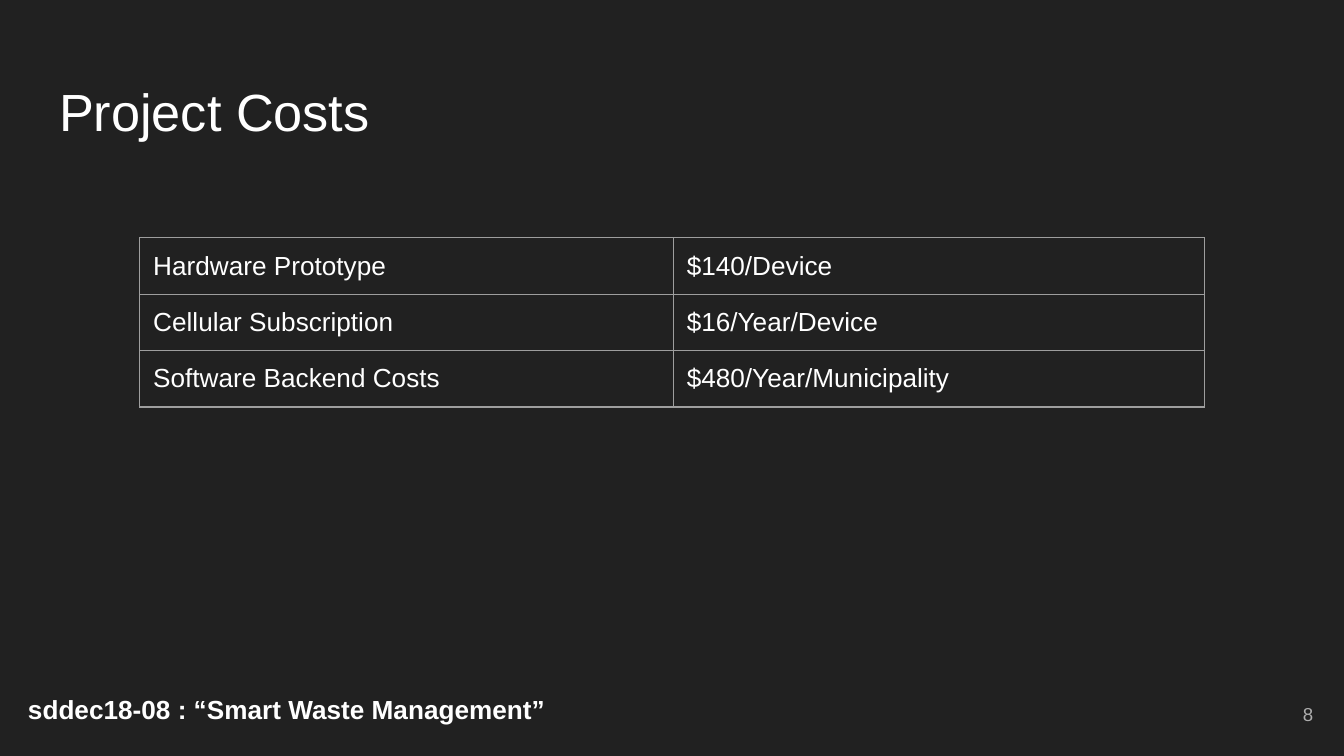
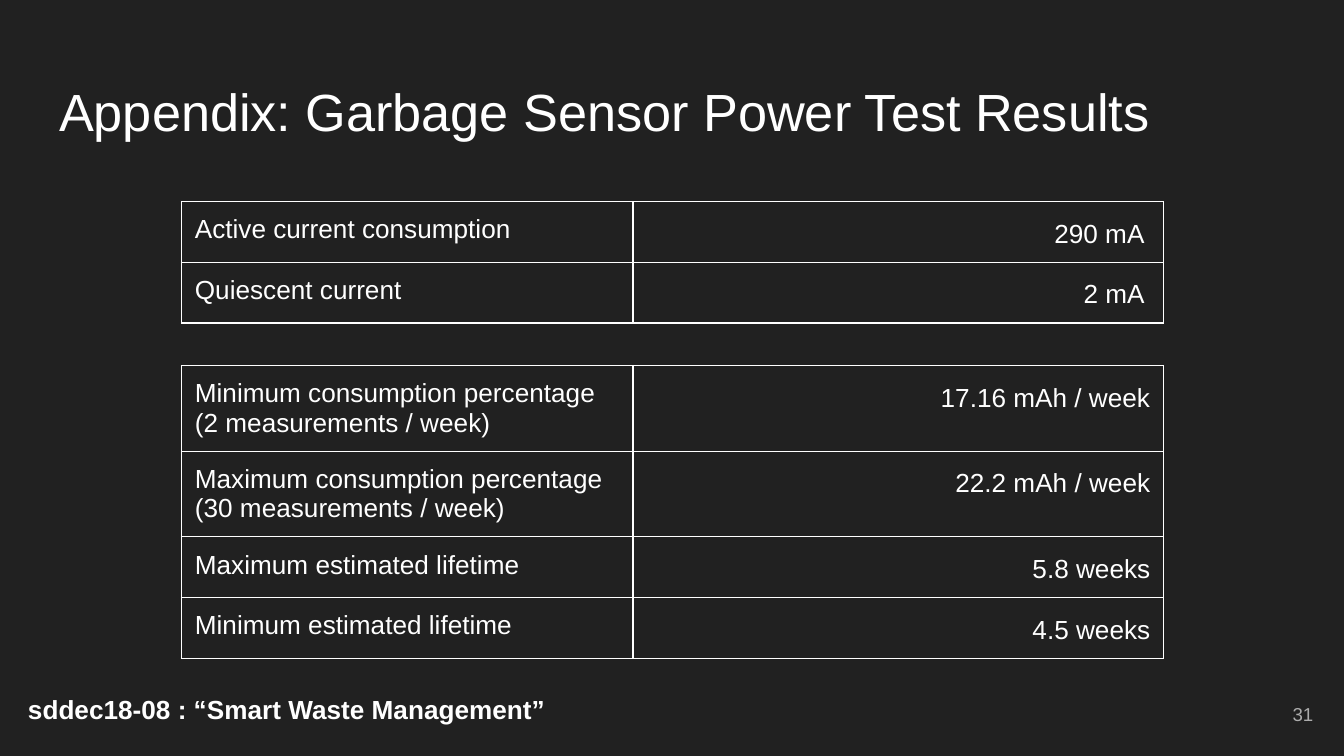
from lxml import etree
from pptx import Presentation
from pptx import util as u
from pptx.dml.color import RGBColor
from pptx.enum import text
from pptx.oxml import ns

DARK = RGBColor(0x21, 0x21, 0x21)
WHITE = RGBColor(0xFF, 0xFF, 0xFF)
GREY = RGBColor(0x9E, 0x9E, 0x9E)
PALE = RGBColor(0xAD, 0xAD, 0xAD)
LEFT, RIGHT = text.PP_ALIGN.LEFT, text.PP_ALIGN.RIGHT
TOP, MID = text.MSO_ANCHOR.TOP, text.MSO_ANCHOR.MIDDLE
PAD = u.Inches(0.1)
SIDES = ("left", "top", "right", "bottom")
FOOTER = "sddec18-08 : “Smart Waste Management”"

PAGES = [
    ("Project Costs", "8", [
        (1.04, 1.77, (3.97, 3.95), 0.42, GREY, LEFT, None, [
            ("Hardware Prototype", "$140/Device"),
            ("Cellular Subscription", "$16/Year/Device"),
            ("Software Backend Costs", "$480/Year/Municipality"),
        ]),
    ]),
    ("Appendix: Garbage Sensor Power Test Results", "31", [
        (1.35, 2.72, (3.36, 3.95), 0.21, WHITE, RIGHT, 1.15, [
            ("Minimum consumption percentage\n(2 measurements / week)", "17.16 mAh / week"),
            ("Maximum consumption percentage\n(30 measurements / week)", "22.2 mAh / week"),
            ("Maximum estimated lifetime", "5.8 weeks"),
            ("Minimum estimated lifetime", "4.5 weeks"),
        ]),
        (1.35, 1.5, (3.36, 3.95), 0.42, WHITE, RIGHT, 1.15, [
            ("Active current consumption", "290 mA "),
            ("Quiescent current", "2 mA "),
        ]),
    ]),
]


def write(frame, words, size, color=WHITE, bold=False, align=LEFT, space=None):
    frame.text = words
    font = {"name": "Arial", "size": u.Pt(size), "bold": bold}
    for para in frame.paragraphs:
        para.alignment = align
        para.line_spacing = space
        for run in para.runs:
            for key, value in font.items():
                setattr(run.font, key, value)
            run.font.color.rgb = color


def place(shape, box, anchor=TOP):
    for key, value in zip(("left", "top", "width", "height"), box):
        setattr(shape, key, u.Inches(value))
    form = {"word_wrap": True, "auto_size": text.MSO_AUTO_SIZE.NONE, "vertical_anchor": anchor}
    form.update({f"margin_{side}": PAD for side in SIDES})
    for key, value in form.items():
        setattr(shape.text_frame, key, value)
    return shape.text_frame


deck = Presentation()
deck.slide_width = u.Inches(10)
deck.slide_height = u.Inches(10) * 9 // 16
back = deck.slide_master.background.fill
back.solid()
back.fore_color.rgb = DARK

for title, number, grids in PAGES:
    slide = deck.slides.add_slide(deck.slide_layouts[5])
    write(place(slide.shapes.title, (0.34, 0.49, 9.32, 0.63)), title, 28)
    foot = slide.shapes.add_textbox(0, 0, 0, 0)
    write(place(foot, (0.11, 5.06, 4.51, 0.43)), FOOTER, 14, bold=True)

    for left, top, widths, height, edge, align, space, rows in grids:
        box = (left, top, sum(widths), height * len(rows))
        table = slide.shapes.add_table(len(rows), len(widths), *map(u.Inches, box)).table
        table.first_row = table.horz_banding = False
        for col, width in zip(table.columns, widths):
            col.width = u.Inches(width)
        for r, row in enumerate(rows):
            table.rows[r].height = u.Inches(height)
            for c, words in enumerate(row):
                cell = table.cell(r, c)
                cell.fill.background()
                for side in SIDES:
                    setattr(cell, f"margin_{side}", PAD)
                style = {"align": align, "space": space} if c else {}
                write(cell.text_frame, words, 14, **style)
                props = cell._tc.get_or_add_tcPr()
                for i, side in enumerate("LRTB"):
                    line = etree.Element(ns.qn(f"a:ln{side}"), w=str(u.Pt(0.75)))
                    fill = etree.SubElement(line, ns.qn("a:solidFill"))
                    etree.SubElement(fill, ns.qn("a:srgbClr"), val=str(edge))
                    props.insert(i, line)

    page = slide.shapes.add_textbox(0, 0, 0, 0)
    write(place(page, (9.27, 5.1, 0.6, 0.43), MID), number, 10, PALE, align=RIGHT)

deck.save("out.pptx")
